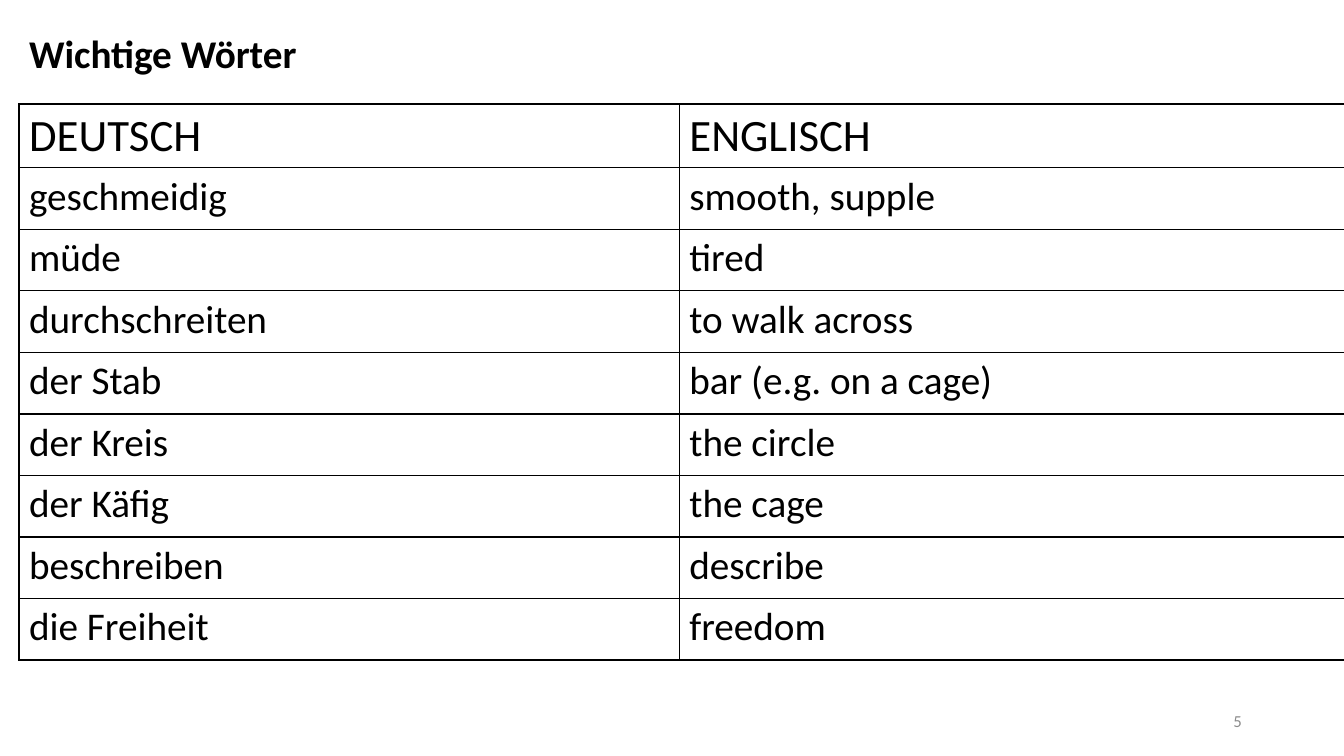
"""Builds a vocabulary slide with a German and English word table."""
from dataclasses import dataclass

from lxml import etree
from pptx import Presentation
from pptx.dml.color import RGBColor
from pptx.enum.text import MSO_ANCHOR, MSO_AUTO_SIZE, PP_ALIGN
from pptx.oxml.ns import qn
from pptx.util import Cm, Pt

LEFT, RIGHT = PP_ALIGN.LEFT, PP_ALIGN.RIGHT
TOP, MIDDLE = MSO_ANCHOR.TOP, MSO_ANCHOR.MIDDLE
GROW = MSO_AUTO_SIZE.SHAPE_TO_FIT_TEXT

TITLE = "Wichtige Wörter"
NUMBER = "5"
WORDS = [
    ("DEUTSCH", "ENGLISCH"),
    ("geschmeidig", "smooth, supple"),
    ("müde", "tired"),
    ("durchschreiten", "to walk across"),
    ("der Stab", "bar (e.g. on a cage)"),
    ("der Kreis", "the circle"),
    ("der Käfig", "the cage"),
    ("beschreiben", "describe"),
    ("die Freiheit", "freedom"),
]


@dataclass(frozen=True)
class Theme:
    """Holds the colours and type sizes."""
    font: str = "Calibri"
    ink: str = "000000"
    grey: str = "8C8C8C"
    head: int = 32
    body: int = 28
    note: int = 12
    rule: int = 1


THEME = Theme()
EDGE = Cm(0.48)
WIDTHS = (Cm(16.64), Cm(16.76))
ROW = Cm(1.55)


def write(frame, text, size, color=THEME.ink, bold=False, align=LEFT):
    """Adds one styled run to the first paragraph."""
    par = frame.paragraphs[0]
    par.alignment = align
    run = par.add_run()
    run.text = text
    font = run.font
    font.name, font.size, font.bold = THEME.font, Pt(size), bold
    font.color.rgb = RGBColor.from_string(color)


def border(cell):
    """Rules all four sides of a cell."""
    props = cell._tc.get_or_add_tcPr()
    for side in ("lnL", "lnR", "lnT", "lnB"):
        line = etree.SubElement(props, qn(f"a:{side}"), w=str(Pt(THEME.rule)))
        fill = etree.SubElement(line, qn("a:solidFill"))
        etree.SubElement(fill, qn("a:srgbClr"), val=THEME.ink)


def add_title(slide):
    """Places the heading."""
    title = slide.shapes.title
    title.left, title.top = EDGE, Cm(0.61)
    title.width, title.height = Cm(7.57), Cm(1.45)
    frame = title.text_frame
    frame.word_wrap = False
    frame.auto_size = GROW
    frame.vertical_anchor = TOP
    write(frame, TITLE, THEME.body, bold=True)


def add_words(slide):
    """Places the word table."""
    shape = slide.shapes.add_table(len(WORDS), len(WIDTHS), EDGE, Cm(2.62),
                                   sum(WIDTHS), ROW * len(WORDS))
    table = shape.table
    table.first_row = table.horz_banding = False
    for col, width in zip(table.columns, WIDTHS):
        col.width = width
    for y, pair in enumerate(WORDS):
        size = THEME.body if y else THEME.head
        for x, word in enumerate(pair):
            cell = table.cell(y, x)
            border(cell)
            cell.fill.background()
            write(cell.text_frame, word, size)


def add_number(slide):
    """Places the page number."""
    box = slide.shapes.add_textbox(Cm(23.93), Cm(17.65), Cm(7.62), Cm(1.02))
    frame = box.text_frame
    frame.word_wrap = True
    frame.vertical_anchor = MIDDLE
    write(frame, NUMBER, THEME.note, THEME.grey, align=RIGHT)


def main():
    """Builds and saves the deck."""
    deck = Presentation()
    deck.slide_width, deck.slide_height = Cm(33.87), Cm(19.05)
    slide = deck.slides.add_slide(deck.slide_layouts.get_by_name("Title Only"))
    add_title(slide)
    add_words(slide)
    add_number(slide)
    deck.save("out.pptx")


if __name__ == "__main__":
    main()
